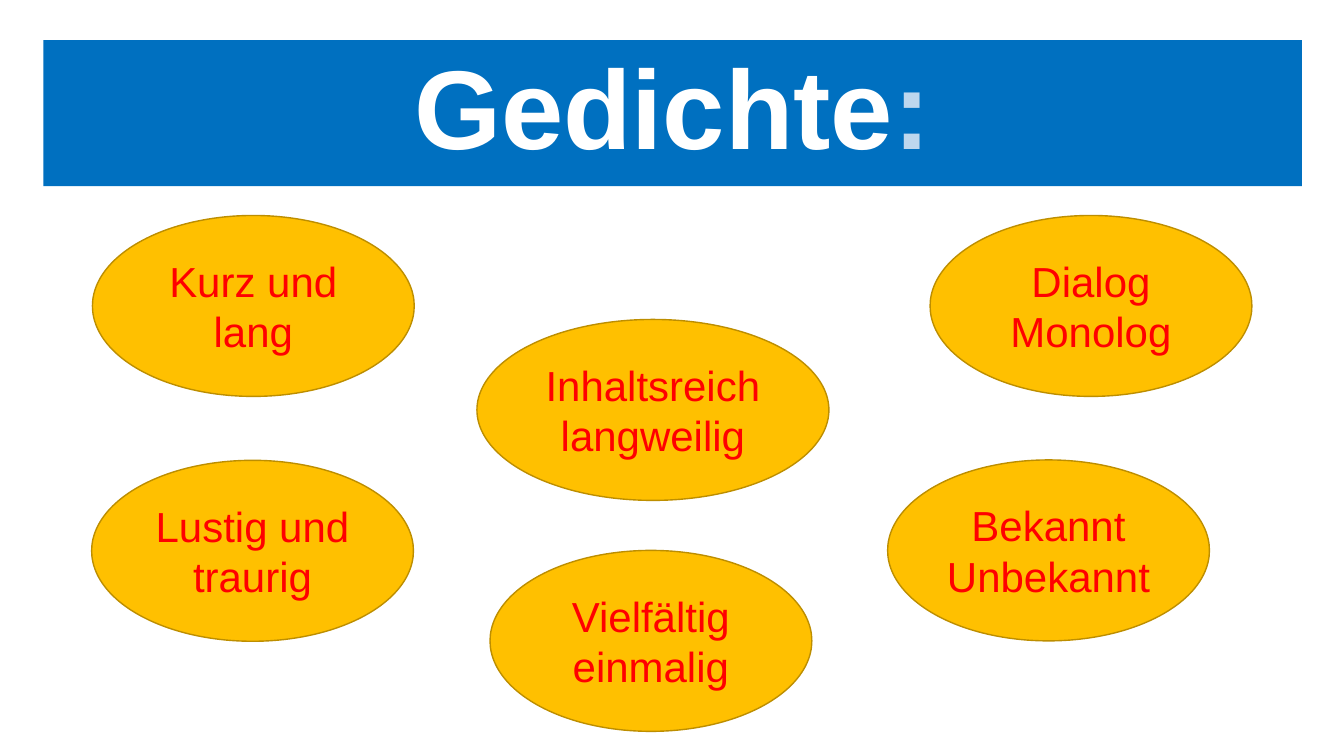
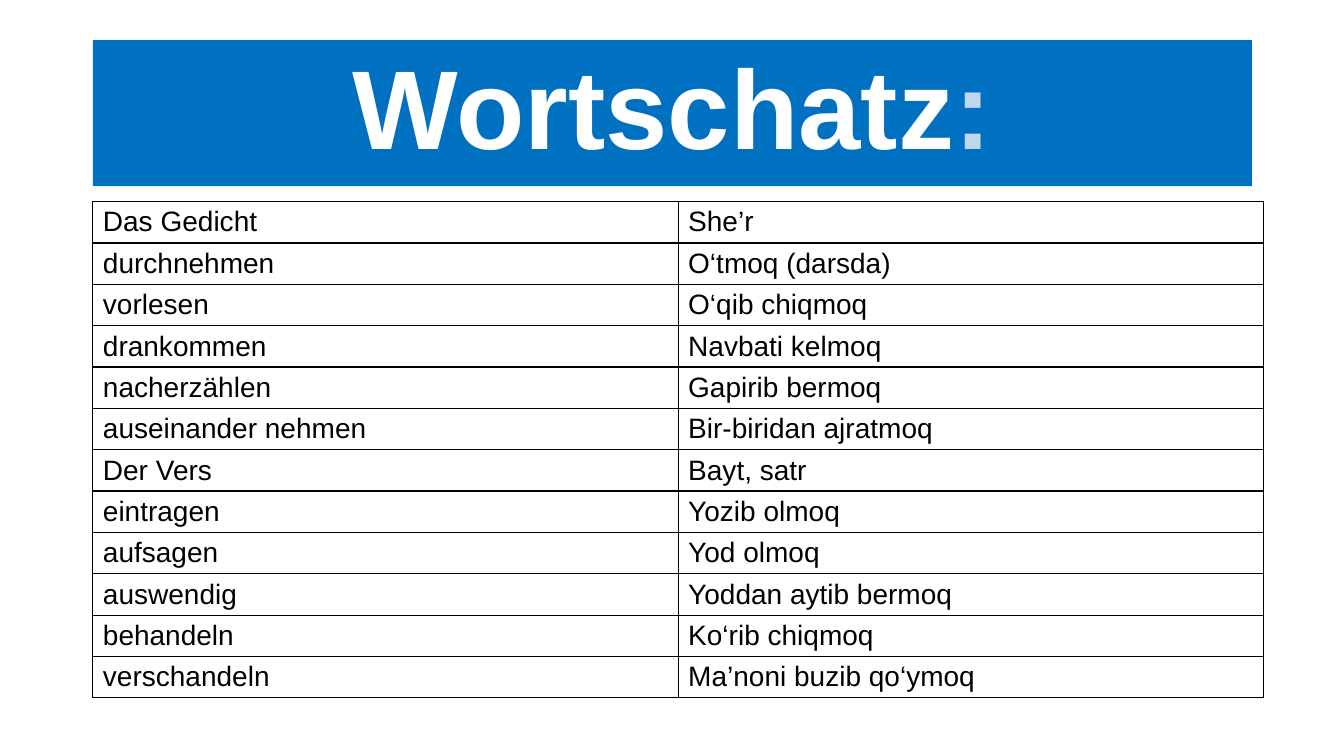
from lxml.etree import SubElement
from pptx import Presentation
from pptx.dml.color import RGBColor
from pptx.enum.shapes import MSO_SHAPE
from pptx.enum.text import MSO_ANCHOR, MSO_AUTO_SIZE, PP_ALIGN
from pptx.oxml.ns import qn
from pptx.util import Cm, Pt

FONT = "Arial"
BLUE, PALE_BLUE, WHITE, BLACK = "0070C0", "BDD7EE", "FFFFFF", "000000"
GOLD, DARK_GOLD, RED = "FFC000", "BD8E00", "FF0000"

BAND_TOP, BAND_H = 1.01, 3.68
OVAL_W, WIDE_OVAL_W, OVAL_H = 8.11, 8.87, 4.56
TABLE_LEFT, TABLE_TOP, COL_W, ROW_H = 2.34, 5.08, 14.75, 1.04

OVALS = [
    (["Inhaltsreich", "langweilig"], 12.02, 8.05, WIDE_OVAL_W),
    (["Kurz und lang"], 2.33, 5.43, OVAL_W),
    (["Lustig und traurig"], 2.31, 11.6, OVAL_W),
    (["Vielfältig", "einmalig"], 12.35, 13.87, OVAL_W),
    (["Bekannt", "Unbekannt"], 22.37, 11.59, OVAL_W),
    (["Dialog", "Monolog"], 23.44, 5.43, OVAL_W),
]

VOCABULARY = [
    ("Das Gedicht", "She’r"),
    ("durchnehmen", "O‘tmoq (darsda)"),
    ("vorlesen", "O‘qib chiqmoq"),
    ("drankommen", "Navbati kelmoq"),
    ("nacherzählen", "Gapirib bermoq"),
    ("auseinander nehmen", "Bir-biridan ajratmoq"),
    ("Der Vers", "Bayt, satr"),
    ("eintragen", "Yozib olmoq"),
    ("aufsagen", "Yod olmoq"),
    ("auswendig", "Yoddan aytib bermoq"),
    ("behandeln", "Ko‘rib chiqmoq"),
    ("verschandeln", "Ma’noni buzib qo‘ymoq"),
]


def rgb(value):
    return RGBColor.from_string(value)


def fill(sp, color):
    sp.fill.solid()
    sp.fill.fore_color.rgb = rgb(color)


def add_run(p, text, size=20, color=BLACK, bold=False, align=PP_ALIGN.LEFT):
    p.alignment = align
    r = p.add_run()
    r.text = text
    r.font.name = FONT
    r.font.size = Pt(size)
    r.font.bold = bold
    r.font.color.rgb = rgb(color)


def add_slide(prs, title, left, width):
    slide = prs.slides.add_slide(prs.slide_layouts[5])
    sp = slide.shapes.title
    sp.left, sp.top, sp.width, sp.height = Cm(left), Cm(BAND_TOP), Cm(width), Cm(BAND_H)
    fill(sp, BLUE)
    tf = sp.text_frame
    tf.auto_size = MSO_AUTO_SIZE.NONE
    tf.vertical_anchor = MSO_ANCHOR.MIDDLE
    p = tf.paragraphs[0]
    p.line_spacing = 0.9
    for text, color in ((title, WHITE), (":", PALE_BLUE)):
        add_run(p, text, size=80, color=color, bold=True, align=PP_ALIGN.CENTER)
    return slide


def add_oval(slide, lines, left, top, width):
    sp = slide.shapes.add_shape(MSO_SHAPE.OVAL, Cm(left), Cm(top), Cm(width), Cm(OVAL_H))
    sp.shadow.inherit = False
    fill(sp, GOLD)
    sp.line.color.rgb = rgb(DARK_GOLD)
    sp.line.width = Pt(1)
    tf = sp.text_frame
    tf.word_wrap = True
    tf.vertical_anchor = MSO_ANCHOR.MIDDLE
    for i, line in enumerate(lines):
        p = tf.add_paragraph() if i else tf.paragraphs[0]
        add_run(p, line, size=30, color=RED, align=PP_ALIGN.CENTER)


def format_cell(cell, text):
    add_run(cell.text_frame.paragraphs[0], text)
    tc_pr = cell._tc.get_or_add_tcPr()
    for side in ("lnL", "lnR", "lnT", "lnB"):
        ln = SubElement(tc_pr, qn(f"a:{side}"), w=str(Pt(1)))
        SubElement(SubElement(ln, qn("a:solidFill")), qn("a:srgbClr"), val=BLACK)
    cell.fill.background()


def add_vocabulary(slide, rows):
    cols = len(rows[0])
    table = slide.shapes.add_table(
        len(rows), cols, Cm(TABLE_LEFT), Cm(TABLE_TOP),
        Cm(COL_W * cols), Cm(ROW_H * len(rows))).table
    table.first_row = table.horz_banding = False
    for col in table.columns:
        col.width = Cm(COL_W)
    for row, texts in zip(table.rows, rows):
        row.height = Cm(ROW_H)
        for cell, text in zip(row.cells, texts):
            format_cell(cell, text)


def main():
    prs = Presentation()
    prs.slide_width, prs.slide_height = Cm(33.87), Cm(19.05)
    poems = add_slide(prs, "Gedichte", 1.09, 31.72)
    for oval in OVALS:
        add_oval(poems, *oval)
    words = add_slide(prs, "Wortschatz", TABLE_LEFT, 29.21)
    add_vocabulary(words, VOCABULARY)
    prs.save("out.pptx")


if __name__ == "__main__":
    main()
